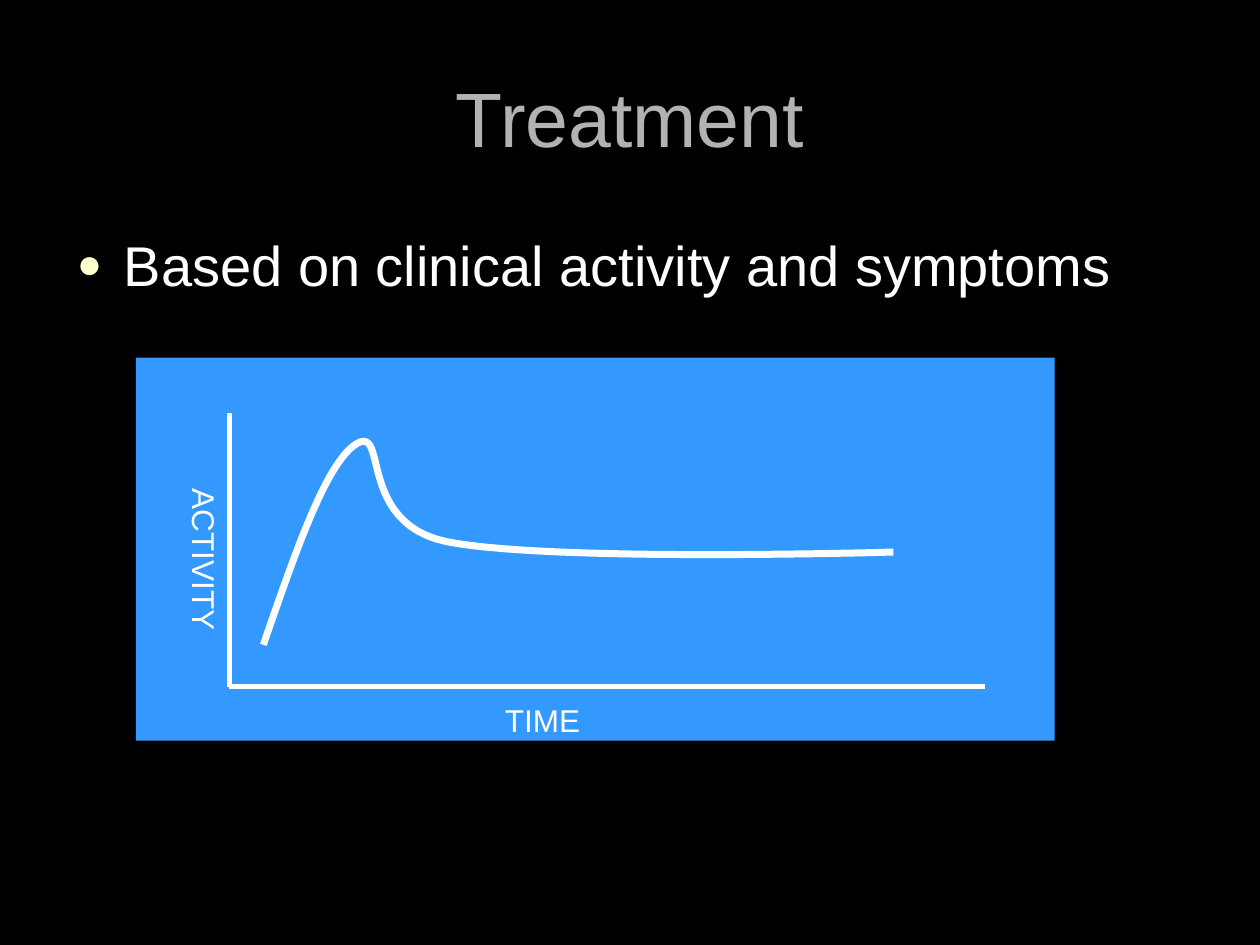
from lxml.etree import SubElement as Sub
from pptx import Presentation
from pptx.dml.color import RGBColor as Rgb
from pptx.enum.shapes import MSO_CONNECTOR as Link, MSO_SHAPE as Kind
from pptx.enum.text import MSO_ANCHOR as Anchor, PP_ALIGN as Align
from pptx.oxml.ns import qn
from pptx.util import Cm, Pt

WHITE = "FFFFFF"
TITLE = ("Treatment", (1.27, 0.76, 22.86, 3.18))
POINT = ("Based on clinical activity and symptoms", (1.3, 4.52, 22.86, 12.57))
PANEL = (2.74, 7.21, 18.52, 7.72)
LABELS = [
    ("TIME", (9.93, 14, 4.88, 1.02), 0),
    ("ACTIVITY", (1.68, 11.53, 4.88, 1.02), 90),
]
ORIGIN = (4.62, 13.84)
ENDS = [(4.62, 8.33), (19.86, 13.84)]
START = (5.31, 13)
BENDS = [
    ((5.95, 11.15), (6.58, 9.3), (7.2, 8.94)),
    ((7.82, 8.58), (7.2, 10.54), (9, 10.92)),
    ((10.8, 11.28), (16.18, 11.18), (18.01, 11.13)),
]
STEPS = 24


def color(code):
    return Rgb.from_string(code)


def write(box, text, size=18, ink=WHITE, align=Align.LEFT,
          anchor=Anchor.TOP, wrap=True, bullet=None):
    frame = box.text_frame
    frame.word_wrap = wrap
    frame.vertical_anchor = anchor
    para = frame.paragraphs[0]
    para.text = text
    para.alignment = align
    if bullet:
        props = para._p.get_or_add_pPr()
        props.set("marL", str(Cm(0.95)))
        props.set("indent", str(-Cm(0.95)))
        Sub(Sub(props, qn("a:buClr")), qn("a:srgbClr"), val=bullet)
        Sub(props, qn("a:buSzPct"), val="75000")
        Sub(props, qn("a:buFont"), typeface="Arial")
        Sub(props, qn("a:buChar"), char="●")
    font = para.runs[0].font
    font.name, font.size = "Arial", Pt(size)
    font.color.rgb = color(ink)


def stroke(shape, width):
    shape.line.color.rgb = color(WHITE)
    shape.line.width = Pt(width)


def curve(start, bends):
    dots = []
    for one, two, end in bends:
        for step in range(1, STEPS + 1):
            t = step / STEPS
            u = 1 - t
            dots.append(tuple(
                Cm(u**3 * a + 3 * u * u * t * b + 3 * u * t * t * c + t**3 * d)
                for a, b, c, d in zip(start, one, two, end)))
        start = end
    return dots


def main():
    deck = Presentation()
    deck.slide_width, deck.slide_height = Cm(25.4), Cm(19.05)
    slide = deck.slides.add_slide(deck.slide_layouts[5])
    back = slide.background.fill
    back.solid()
    back.fore_color.rgb = color("000000")
    shapes = slide.shapes

    text, place = TITLE
    head = shapes.title
    head.left, head.top, head.width, head.height = map(Cm, place)
    write(head, text, size=44, ink="B2B2B2", align=Align.CENTER,
          anchor=Anchor.MIDDLE)

    text, place = POINT
    write(shapes.add_textbox(*map(Cm, place)), text, size=32, bullet="FFFFCC")

    panel = shapes.add_shape(Kind.RECTANGLE, *map(Cm, PANEL))
    panel.shadow.inherit = False
    panel.fill.solid()
    panel.fill.fore_color.rgb = color("3399FF")
    panel.line.fill.background()

    for end in ENDS:
        axis = shapes.add_connector(Link.STRAIGHT, *map(Cm, ORIGIN + end))
        stroke(axis, 3)
        Sub(axis._element.spPr, qn("a:effectLst"))

    for text, place, turn in LABELS:
        box = shapes.add_textbox(*map(Cm, place))
        box.rotation = turn
        write(box, text)

    pen = shapes.build_freeform(*map(Cm, START))
    pen.add_line_segments(curve(START, BENDS), close=False)
    trend = pen.convert_to_shape()
    trend.shadow.inherit = False
    trend.fill.background()
    stroke(trend, 4)

    deck.save("out.pptx")


if __name__ == "__main__":
    main()
